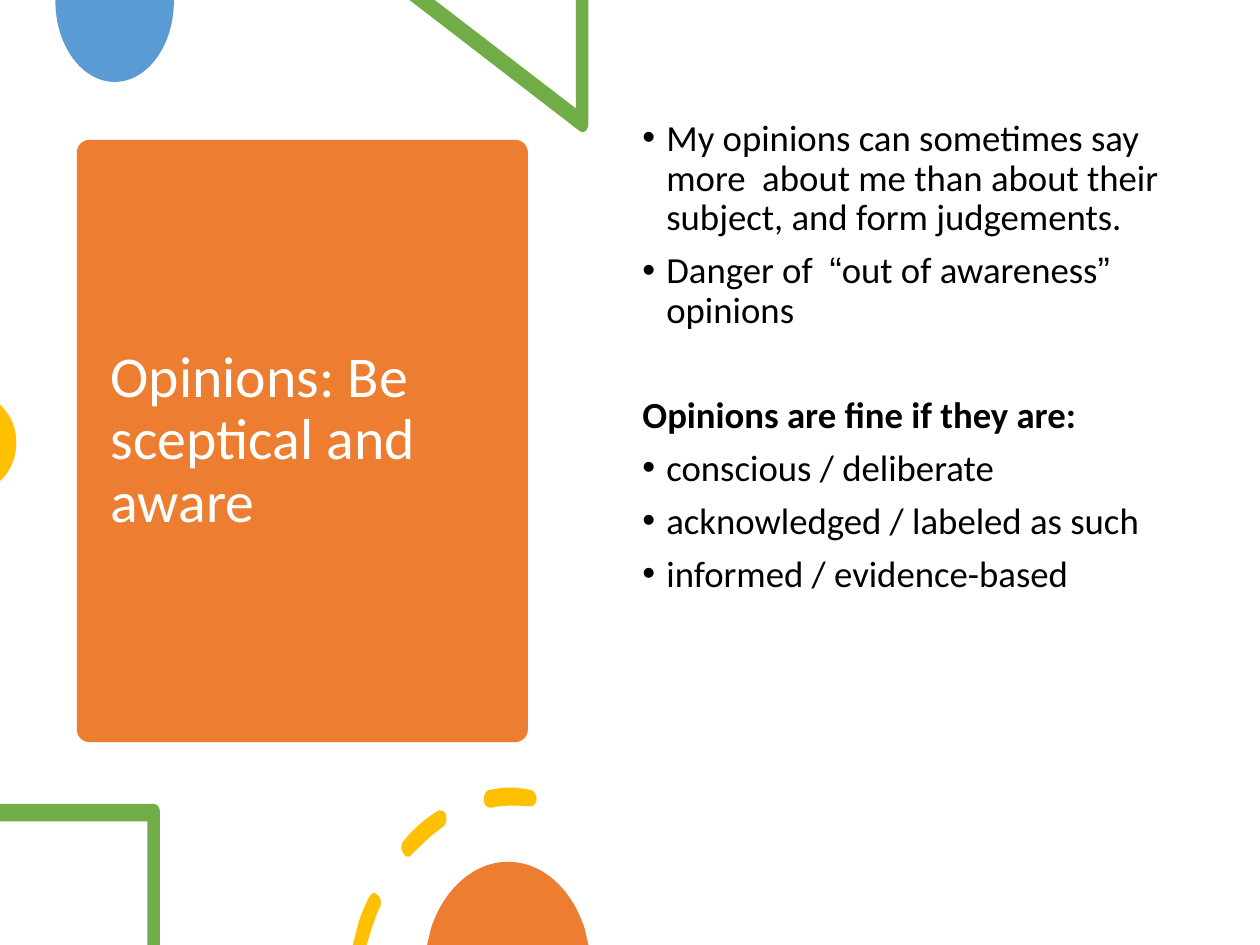
from lxml import etree
from pptx import Presentation
from pptx.dml.color import RGBColor
from pptx.enum.shapes import MSO_SHAPE
from pptx.enum.text import MSO_ANCHOR
from pptx.oxml.ns import qn
from pptx.util import Inches, Pt

WHITE = RGBColor(0xFF, 0xFF, 0xFF)
BLACK = RGBColor(0x00, 0x00, 0x00)
ORANGE = RGBColor(0xED, 0x7D, 0x31)
BLUE = RGBColor(0x5B, 0x9B, 0xD5)
GREEN = RGBColor(0x70, 0xAD, 0x47)
YELLOW = RGBColor(0xFF, 0xC0, 0x00)

HALF_DISC = [[(0.94, 0), (0, 0), (0, 0.01), (0, 0.36, 0.21, 0.65, 0.47, 0.65),
              (0.73, 0.65, 0.94, 0.36, 0.94, 0.01)]]
TRIANGLE = [[(1.42, 0), (1.32, 0), (1.32, 0.86), (0.2, 0), (0, 0), (1.35, 1.04),
             (1.36, 1.05, 1.36, 1.05, 1.37, 1.05),
             (1.4, 1.05, 1.42, 1.02, 1.42, 0.98)]]
EDGE_DISC = [[(0, 0), (0, 0.61), (0.01, 0.6), (0.08, 0.53, 0.13, 0.43, 0.13, 0.3),
              (0.13, 0.18, 0.08, 0.08, 0.01, 0.01)]]
CORNER_FRAME = [[(1.22, 0), (0, 0), (0, 0.14), (1.17, 0.14), (1.17, 1.12),
                 (1.27, 1.12), (1.27, 0.07), (1.27, 0.03, 1.25, 0, 1.22, 0)]]
DASHED_ARC = [
    [(0.18, 0.84), (0.16, 0.83, 0.14, 0.85, 0.13, 0.87),
     (0.1, 0.93, 0.07, 1, 0.05, 1.06), (0, 1.25), (0.11, 1.25), (0.15, 1.12),
     (0.17, 1.06, 0.19, 1, 0.22, 0.94), (0.23, 0.91, 0.22, 0.86, 0.19, 0.85),
     (0.19, 0.84, 0.18, 0.84, 0.18, 0.84)],
    [(0.69, 0.18), (0.68, 0.18, 0.68, 0.18, 0.67, 0.19),
     (0.57, 0.25, 0.48, 0.33, 0.4, 0.43), (0.38, 0.45, 0.38, 0.5, 0.4, 0.52),
     (0.41, 0.54, 0.42, 0.55, 0.44, 0.55), (0.44, 0.55),
     (0.45, 0.55, 0.46, 0.54, 0.47, 0.53),
     (0.55, 0.45, 0.63, 0.37, 0.72, 0.31), (0.74, 0.29, 0.75, 0.25, 0.74, 0.22),
     (0.73, 0.19, 0.71, 0.18, 0.69, 0.18)],
    [(1.25, 0), (1.19, 0, 1.14, 0.01, 1.08, 0.02),
     (1.06, 0.02, 1.04, 0.06, 1.04, 0.1), (1.04, 0.13, 1.06, 0.16, 1.09, 0.16),
     (1.09, 0.16, 1.1, 0.16, 1.1, 0.16), (1.2, 0.14, 1.3, 0.14, 1.4, 0.15),
     (1.43, 0.16, 1.45, 0.13, 1.46, 0.1), (1.46, 0.06, 1.44, 0.02, 1.41, 0.02),
     (1.41, 0.02, 1.41, 0.02, 1.41, 0.02), (1.36, 0.01, 1.3, 0, 1.25, 0)],
]
DOME = [[(0.64, 0), (0.37, 0, 0.13, 0.22, 0.03, 0.53), (0, 0.66), (1.28, 0.66),
         (1.25, 0.53), (1.15, 0.22, 0.92, 0, 0.64, 0)]]

TITLE = "Opinions: Be sceptical and aware"
WARNINGS = [
    [("My opinions can sometimes say more  about me than about their "
      "subject, and form judgements.", "Calibri")],
    [("Danger of  ", "Calibri"), ("“", "Arial"), ("out of awareness", "Calibri"),
     ("”", "Arial"), (" opinions", "Calibri")],
]
HEADING = "Opinions are fine if they are:"
CONDITIONS = ["conscious / deliberate", "acknowledged / labeled as such",
              "informed / evidence-based"]


def paint(shape, color):
    """Give a shape a flat fill without line or shadow."""
    shape.fill.solid()
    shape.fill.fore_color.rgb = color
    shape.line.fill.background()
    shape.shadow.inherit = False


def bend_segments(shape, left, top, steps):
    """Turn each segment that has control points into a cubic curve."""
    for segment, step in zip(list(shape._element.iter(qn("a:lnTo"))), steps):
        if len(step) == 2:
            continue
        curve = etree.Element(qn("a:cubicBezTo"))
        for x, y in zip(step[::2], step[1::2]):
            etree.SubElement(curve, qn("a:pt"),
                             x=str(left + Inches(x) - shape.left),
                             y=str(top + Inches(y) - shape.top))
        segment.getparent().replace(segment, curve)


def add_outline(slide, left, top, contours, color):
    """Draw closed contours whose points are relative to left and top."""
    builder = None
    for contour in contours:
        points = [(left + Inches(step[-2]), top + Inches(step[-1])) for step in contour]
        if builder is None:
            builder = slide.shapes.build_freeform(*points[0])
        else:
            builder.move_to(*points[0])
        builder.add_line_segments(points[1:], close=True)
    shape = builder.convert_to_shape()
    bend_segments(shape, left, top, [step for contour in contours for step in contour[1:]])
    paint(shape, color)


def add_backdrop(slide, left, top, width, height):
    """Place the white panel behind everything."""
    paint(slide.shapes.add_shape(MSO_SHAPE.RECTANGLE, left, top, width, height), WHITE)


def add_decorations(slide, left, top):
    """Place the cropped ornaments around the slide's left half."""
    for x, y, contours, color in (
            (0.44, 0, HALF_DISC, BLUE),
            (3.25, 0, TRIANGLE, GREEN),
            (0, 3.21, EDGE_DISC, YELLOW),
            (0, 6.38, CORNER_FRAME, GREEN),
            (2.8, 6.25, DASHED_ARC, YELLOW),
            (3.39, 6.84, DOME, ORANGE)):
        add_outline(slide, left + Inches(x), top + Inches(y), contours, color)


def add_title_card(slide, left, top, width, height):
    """Place the orange card with the title inside it."""
    card = slide.shapes.add_shape(MSO_SHAPE.ROUNDED_RECTANGLE, left, top, width, height)
    card.adjustments[0] = 0.028
    paint(card, ORANGE)
    inset_x, inset_y = Inches(0.17), Inches(0.11)
    title = slide.shapes.add_textbox(left + inset_x, top + inset_y,
                                     width - 2 * inset_x, height - 2 * inset_y)
    frame = title.text_frame
    frame.word_wrap = True
    frame.vertical_anchor = MSO_ANCHOR.MIDDLE
    paragraph = frame.paragraphs[0]
    paragraph.text = TITLE
    paragraph.line_spacing = 0.9
    paragraph.font.size = Pt(33)
    paragraph.font.name = "Calibri"
    paragraph.font.color.rgb = WHITE


def format_point(paragraph, bullet=True, space_before=7.5):
    """Set the spacing, hanging indent, bullet and font of a body paragraph."""
    paragraph.line_spacing = 0.9
    paragraph.space_before = Pt(space_before)
    paragraph.font.size = Pt(21)
    paragraph.font.color.rgb = BLACK
    properties = paragraph._p.get_or_add_pPr()
    properties.set("marL", str(Inches(0.19)))
    properties.set("indent", str(-Inches(0.19)))
    if bullet:
        font = etree.Element(qn("a:buFont"), typeface="Arial")
        mark = etree.Element(qn("a:buChar"), char="•")
        position = properties.index(properties.find(qn("a:defRPr")))
        properties[position:position] = [font, mark]


def add_body(slide, left, top, width, height):
    """Place the warnings, the heading and its conditions."""
    frame = slide.shapes.add_textbox(left, top, width, height).text_frame
    frame.word_wrap = True
    paragraph = frame.paragraphs[0]
    for runs in WARNINGS:
        for text, font_name in runs:
            run = paragraph.add_run()
            run.text = text
            run.font.name = font_name
        format_point(paragraph)
        paragraph = frame.add_paragraph()
    paragraph.text = HEADING
    paragraph.font.name = "Calibri"
    paragraph.font.bold = True
    format_point(paragraph, bullet=False, space_before=37.5)
    for condition in CONDITIONS:
        paragraph = frame.add_paragraph()
        paragraph.text = condition
        paragraph.font.name = "Calibri"
        format_point(paragraph)


def main():
    """Build the slide and save it."""
    presentation = Presentation()
    presentation.slide_width = Inches(10)
    presentation.slide_height = Inches(7.5)
    slide = presentation.slides.add_slide(presentation.slide_layouts[6])
    add_backdrop(slide, Inches(0), Inches(0), Inches(10), Inches(7.5))
    add_title_card(slide, Inches(0.61), Inches(1.11), Inches(3.58), Inches(4.78))
    add_decorations(slide, Inches(0), Inches(0))
    add_body(slide, Inches(5), Inches(0.9), Inches(4.31), Inches(5.35))
    presentation.save("out.pptx")


if __name__ == "__main__":
    main()
